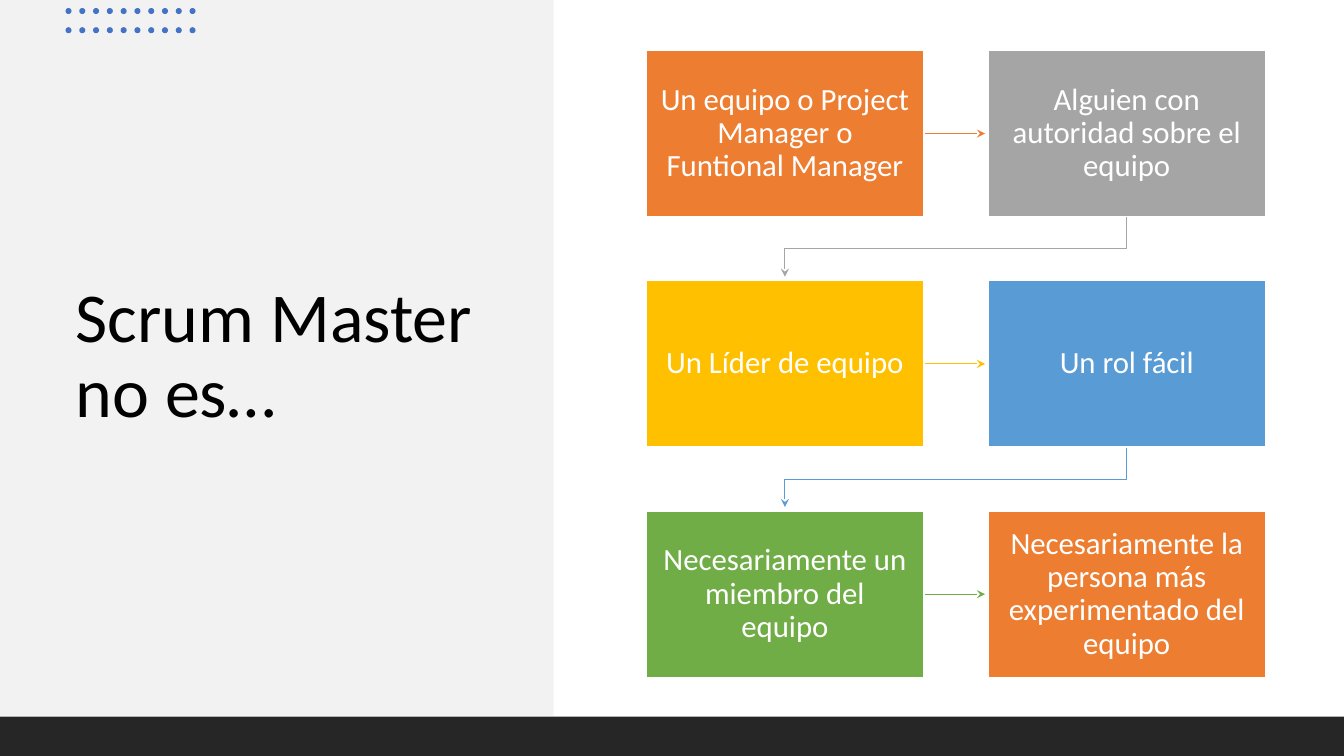
from lxml.etree import SubElement
from pptx import Presentation
from pptx.dml.color import RGBColor
from pptx.enum.shapes import MSO_CONNECTOR, MSO_SHAPE
from pptx.enum.text import MSO_ANCHOR, MSO_AUTO_SIZE, PP_ALIGN
from pptx.oxml.ns import qn
from pptx.util import Inches, Pt

FONT = "Calibri"
STEPS = [
    ("Un equipo o Project Manager o Funtional Manager", "ED7D31"),
    ("Alguien con autoridad sobre el equipo", "A5A5A5"),
    ("Un Líder de equipo", "FFC000"),
    ("Un rol fácil", "599BD5"),
    ("Necesariamente un miembro del equipo", "70AD47"),
    ("Necesariamente la persona más experimentado del equipo", "ED7D31"),
]


def color(hex_string):
    return RGBColor.from_string(hex_string)


def add_block(slide, kind, left, top, width, height, fill):
    shape = slide.shapes.add_shape(
        kind, Inches(left), Inches(top), Inches(width), Inches(height))
    shape.shadow.inherit = False
    shape.fill.solid()
    shape.fill.fore_color.rgb = color(fill)
    shape.line.fill.background()
    return shape


def write_text(shape, text, size, text_color, alignment, inset_x, inset_y):
    frame = shape.text_frame
    frame.text = text
    frame.word_wrap = True
    frame.auto_size = MSO_AUTO_SIZE.NONE
    frame.vertical_anchor = MSO_ANCHOR.MIDDLE
    frame.margin_left = frame.margin_right = Inches(inset_x)
    frame.margin_top = frame.margin_bottom = Inches(inset_y)
    paragraph = frame.paragraphs[0]
    paragraph.alignment = alignment
    paragraph.line_spacing = 0.9
    paragraph.font.name = FONT
    paragraph.font.size = Pt(size)
    paragraph.font.color.rgb = color(text_color)


def style_arrow(arrow, line_color):
    arrow.line.color.rgb = color(line_color)
    arrow.line.width = Pt(0.75)
    SubElement(arrow.line._get_or_add_ln(), qn("a:tailEnd"), type="stealth")


def add_title_panel(slide, left, top, width, height):
    panel = add_block(slide, MSO_SHAPE.RECTANGLE, left, top, width, height, "F2F2F2")
    title = slide.shapes.title
    title.left, title.top = Inches(left + 0.65), Inches(top + 1.32)
    title.width, title.height = Inches(4.24), Inches(4.45)
    write_text(title, "Scrum Master no es…", 50, "000000", PP_ALIGN.LEFT, 0.1, 0.05)
    # Bring the title in front of the panel
    panel._element.addnext(title._element)


def add_dots(slide, left, top, width, height, columns=10, rows=2, size=0.06):
    step_x = (width - size) / (columns - 1)
    step_y = (height - size) / (rows - 1)
    for row in range(rows):
        for column in range(columns):
            add_block(slide, MSO_SHAPE.OVAL, left + column * step_x,
                      top + row * step_y, size, size, "4472C4")


def add_straight_arrow(slide, left, y, right, line_color):
    arrow = slide.shapes.add_connector(
        MSO_CONNECTOR.STRAIGHT, Inches(left), Inches(y), Inches(right), Inches(y))
    style_arrow(arrow, line_color)
    SubElement(arrow._element.spPr, qn("a:effectLst"))


def add_return_arrow(slide, start_x, top, end_x, bottom, line_color):
    middle = top + 0.32
    points = [(start_x, middle), (end_x, middle), (end_x, bottom)]
    builder = slide.shapes.build_freeform(Inches(start_x), Inches(top))
    builder.add_line_segments([(Inches(x), Inches(y)) for x, y in points], close=False)
    arrow = builder.convert_to_shape()
    arrow.shadow.inherit = False
    arrow.fill.background()
    style_arrow(arrow, line_color)


def add_process(slide, left, top, width, height, columns=2, rows=3):
    box_width, box_height = 2.75, 1.65
    step_x = (width - box_width) / (columns - 1)
    step_y = (height - box_height) / (rows - 1)
    for index, (text, fill) in enumerate(STEPS):
        row, column = divmod(index, columns)
        x, y = left + column * step_x, top + row * step_y
        # Arrow to the next step
        if column < columns - 1:
            add_straight_arrow(slide, x + box_width + 0.01, y + box_height / 2,
                               x + step_x - 0.03, fill)
        elif row < rows - 1:
            add_return_arrow(slide, x + box_width / 2, y + box_height,
                             left + box_width / 2, y + step_y - 0.04, fill)
        # Step box
        box = add_block(slide, MSO_SHAPE.RECTANGLE, x, y, box_width, box_height, fill)
        box.line.color.rgb = color("FFFFFF")
        box.line.width = Pt(1)
        write_text(box, text, 22, "FFFFFF", PP_ALIGN.CENTER, 0.13, 0.14)


def main():
    presentation = Presentation()
    presentation.slide_width = Inches(13.33)
    presentation.slide_height = Inches(7.5)
    slide = presentation.slides.add_slide(presentation.slide_layouts[5])
    add_title_panel(slide, 0, 0, 5.49, 7.1)
    add_dots(slide, 0.65, 0.08, 1.29, 0.25)
    # Footer band
    add_block(slide, MSO_SHAPE.RECTANGLE, 0, 7.11, 13.33, 0.39, "262626")
    add_process(slide, 6.41, 0.5, 6.14, 6.22)
    presentation.save("out.pptx")


if __name__ == "__main__":
    main()
